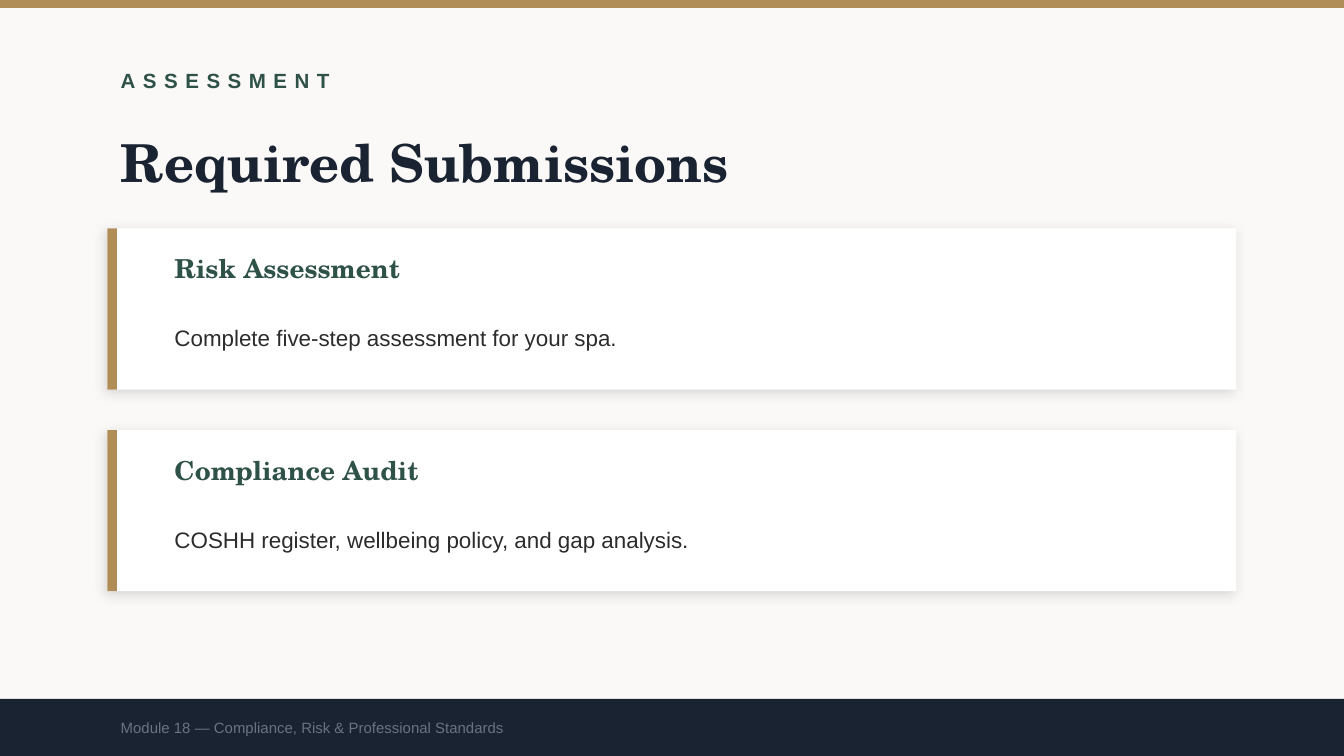
import dataclasses

import pptx
import pptx.dml.color
import pptx.enum.shapes
import pptx.enum.text
import pptx.oxml
import pptx.oxml.ns
import pptx.util

Inches = pptx.util.Inches
Pt = pptx.util.Pt

SERIF, SANS = "TeX Gyre Schola", "Arial"
GOLD, GREEN, NAVY = "B08D57", "2E5148", "1A2332"
PAPER, WHITE, INK, GREY = "FAF9F7", "FFFFFF", "2C2C2C", "6B7280"
WIDTH = 10
HEIGHT = WIDTH * 9 / 16
LEFT = 0.8
FOOT = 5.2


@dataclasses.dataclass
class Card:
    title: str
    body: str


CARDS = [
    Card("Risk Assessment", "Complete five-step assessment for your spa."),
    Card("Compliance Audit", "COSHH register, wellbeing policy, and gap analysis."),
]


def paint(fill, color: str) -> None:
    fill.solid()
    fill.fore_color.rgb = pptx.dml.color.RGBColor.from_string(color)


def bar(slide, x: float, y: float, w: float, h: float, color: str):
    kind = pptx.enum.shapes.MSO_SHAPE.RECTANGLE
    shape = slide.shapes.add_shape(kind, Inches(x), Inches(y), Inches(w), Inches(h))
    shape.shadow.inherit = False
    paint(shape.fill, color)
    shape.line.fill.background()
    return shape


def shade(shape) -> None:
    """Give a shape a soft shadow down and to the left."""
    effects = shape._element.spPr.find(pptx.oxml.ns.qn("a:effectLst"))
    effects.append(pptx.oxml.parse_xml(
        f'<a:outerShdw {pptx.oxml.ns.nsdecls("a")} blurRad="{Pt(6)}" dist="{Pt(2)}" '
        f'dir="{135 * 60000}" algn="bl" rotWithShape="0">'
        '<a:srgbClr val="000000"><a:alpha val="12000"/></a:srgbClr></a:outerShdw>'))


def write(slide, text: str, x: float, y: float, w: float, h: float, *,
          size: float, color: str, face: str = SANS, bold: bool = False,
          space: float = 0, lead: float | None = None, box=None) -> None:
    if box is None:
        box = slide.shapes.add_textbox(0, 0, 0, 0)
    box.left, box.top, box.width, box.height = map(Inches, (x, y, w, h))
    frame = box.text_frame
    frame.word_wrap = True
    frame.auto_size = pptx.enum.text.MSO_AUTO_SIZE.NONE
    frame.vertical_anchor = pptx.enum.text.MSO_ANCHOR.MIDDLE
    para = frame.paragraphs[0]
    para.alignment = pptx.enum.text.PP_ALIGN.LEFT
    if lead:
        para.line_spacing = lead
    run = para.add_run()
    run.text = text
    font = run.font
    font.name, font.size, font.bold = face, Pt(size), bold
    paint(font.fill, color)
    if space:
        run._r.get_or_add_rPr().set("spc", str(round(space * 100)))


def draw(slide, card: Card, y: float) -> None:
    shade(bar(slide, LEFT, y, 8.4, 1.2, WHITE))
    bar(slide, LEFT, y, 0.07, 1.2, GOLD)
    write(slide, card.title, 1.2, y + 0.12, 7.7, 0.35,
          size=14, color=GREEN, face=SERIF, bold=True)
    write(slide, card.body, 1.2, y + 0.5, 7.7, 0.55, size=12, color=INK, lead=1.4)


def main() -> None:
    deck = pptx.Presentation()
    deck.slide_width, deck.slide_height = Inches(WIDTH), Inches(HEIGHT)
    slide = deck.slides.add_slide(deck.slide_layouts[5])
    paint(slide.background.fill, PAPER)

    # Header
    bar(slide, 0, 0, WIDTH, 0.06, GOLD)
    write(slide, "ASSESSMENT", LEFT, 0.4, 8, 0.4,
          size=11, color=GREEN, bold=True, space=4)
    write(slide, "Required Submissions", LEFT, 0.9, 8, 0.6,
          size=28, color=NAVY, face=SERIF, bold=True, box=slide.shapes.title)

    # Cards
    for row, card in enumerate(CARDS):
        draw(slide, card, 1.7 + 1.5 * row)

    # Footer
    bar(slide, 0, FOOT, WIDTH, HEIGHT - FOOT, NAVY)
    write(slide, "Module 18 — Compliance, Risk & Professional Standards",
          LEFT, FOOT, 8, HEIGHT - FOOT, size=8, color=GREY)

    deck.save("out.pptx")


if __name__ == "__main__":
    main()
